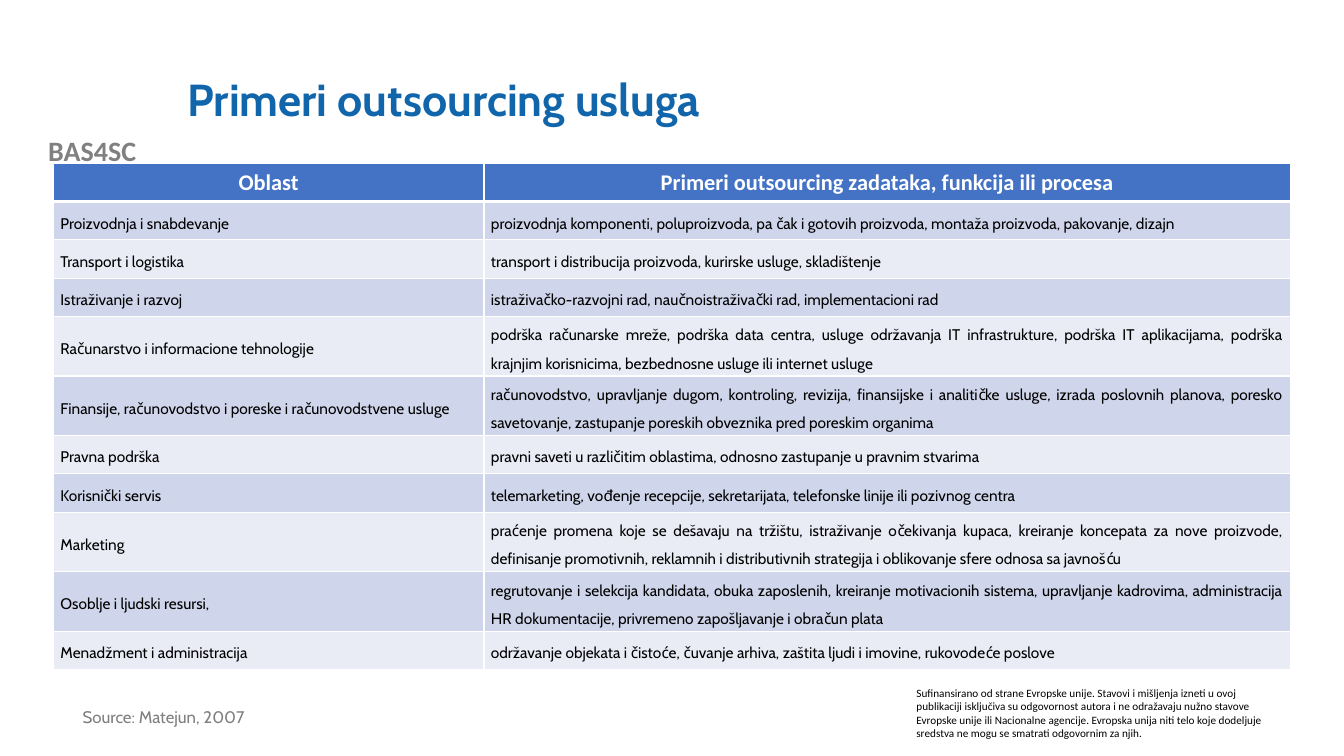
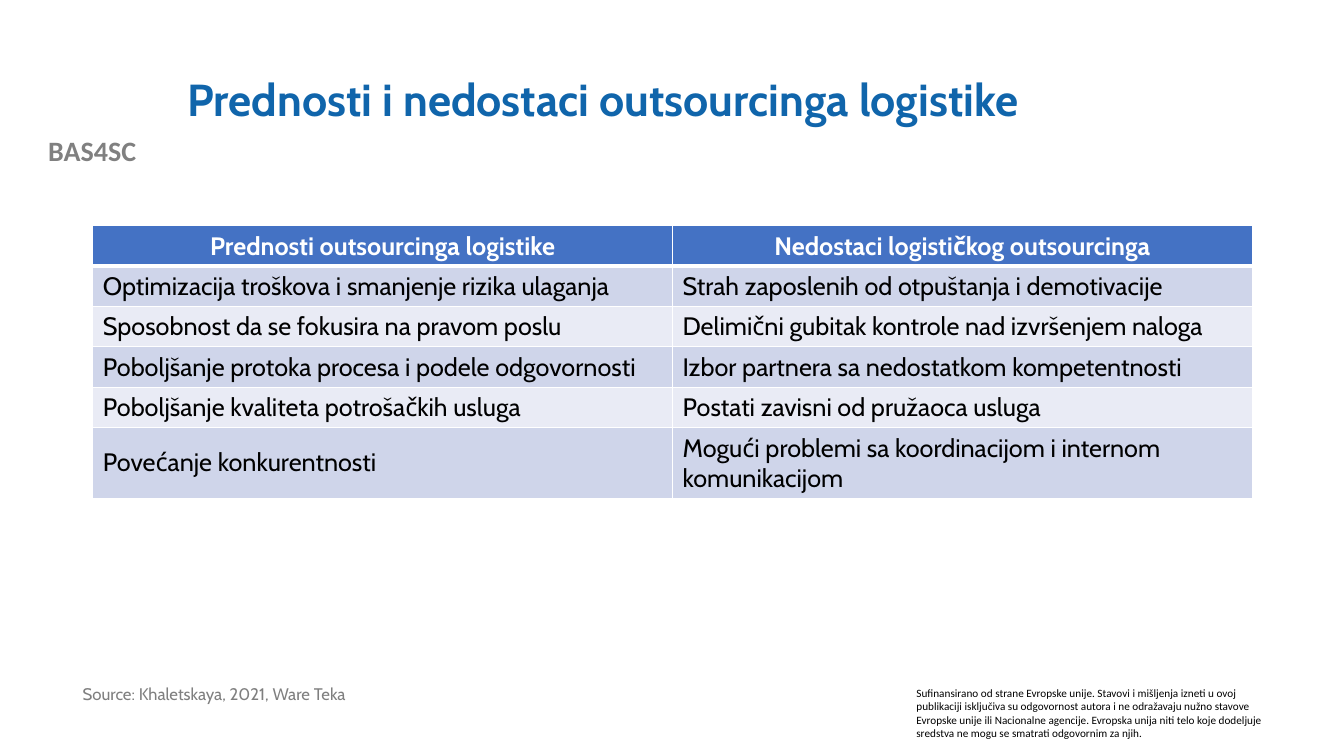
import dataclasses
import typing

import lxml.etree
import pptx
import pptx.dml.color
import pptx.enum.text
import pptx.oxml.ns
import pptx.util

EMU_PER_PX = 9144
ALIGN = pptx.enum.text.PP_ALIGN
ANCHOR = pptx.enum.text.MSO_ANCHOR

COLORS = {
    "title": "1065AB",
    "label": "808080",
    "source": "7F7F7F",
    "text": "000000",
    "white": "FFFFFF",
    "header": "4472C4",
    "band_dark": "CFD5EA",
    "band_light": "E9EBF5",
}
THIN_BORDER = 1
HEADER_BORDER = 3


@dataclasses.dataclass(frozen=True)
class TextStyle:
    font: str
    size: int
    color: str
    bold: bool = False
    align: typing.Any = ALIGN.LEFT
    line_spacing: float = 1.0
    space_after: int = 0


@dataclasses.dataclass(frozen=True)
class Area:
    left: int
    top: int
    width: int
    height: int


@dataclasses.dataclass(frozen=True)
class Margins:
    side: int
    top: int
    bottom: int


@dataclasses.dataclass(frozen=True)
class TableSpec:
    left: int
    top: int
    columns: tuple[int, ...]
    row_height: int
    rows: list[tuple[str, str]]
    header_style: TextStyle
    body_style: TextStyle
    body_margins: Margins


@dataclasses.dataclass(frozen=True)
class SlideSpec:
    title: str
    source: str
    source_top: int
    table: TableSpec


TITLE_STYLE = TextStyle("Cabin", 32, "title", bold=True, line_spacing=0.9)
LABEL_STYLE = TextStyle("Calibri", 20, "label", bold=True, align=ALIGN.CENTER)
NOTICE_STYLE = TextStyle("Calibri", 8, "text")
SOURCE_STYLE = TextStyle("Cabin", 12, "source", line_spacing=0.9)

NOTICE = (
    "Sufinansirano od strane Evropske unije. Stavovi i mišljenja izneti u ovoj "
    "publikaciji isključiva su odgovornost autora i ne odražavaju nužno stavove "
    "Evropske unije ili Nacionalne agencije. Evropska unija niti telo koje dodeljuje "
    "sredstva ne mogu se smatrati odgovornim za njih."
)

SERVICES = [
    ("Oblast", "Primeri outsourcing zadataka, funkcija ili procesa"),
    ("Proizvodnja i snabdevanje",
     "proizvodnja komponenti, poluproizvoda, pa čak i gotovih proizvoda, "
     "montaža proizvoda, pakovanje, dizajn"),
    ("Transport i logistika",
     "transport i distribucija proizvoda, kurirske usluge, skladištenje"),
    ("Istraživanje i razvoj",
     "istraživačko-razvojni rad, naučnoistraživački rad, implementacioni rad"),
    ("Računarstvo i informacione tehnologije",
     "podrška računarske mreže, podrška data centra, usluge održavanja IT "
     "infrastrukture, podrška IT aplikacijama, podrška krajnjim korisnicima, "
     "bezbednosne usluge ili internet usluge"),
    ("Finansije, računovodstvo i poreske i računovodstvene usluge",
     "računovodstvo, upravljanje dugom, kontroling, revizija, finansijske i "
     "analitičke usluge, izrada poslovnih planova, poresko savetovanje, "
     "zastupanje poreskih obveznika pred poreskim organima"),
    ("Pravna podrška",
     "pravni saveti u različitim oblastima, odnosno zastupanje u pravnim stvarima"),
    ("Korisnički servis",
     "telemarketing, vođenje recepcije, sekretarijata, telefonske linije ili "
     "pozivnog centra"),
    ("Marketing",
     "praćenje promena koje se dešavaju na tržištu, istraživanje očekivanja kupaca, "
     "kreiranje koncepata za nove proizvode, definisanje promotivnih, reklamnih i "
     "distributivnih strategija i oblikovanje sfere odnosa sa javnošću"),
    ("Osoblje i ljudski resursi,",
     "regrutovanje i selekcija kandidata, obuka zaposlenih, kreiranje motivacionih "
     "sistema, upravljanje kadrovima, administracija HR dokumentacije, privremeno "
     "zapošljavanje i obračun plata"),
    ("Menadžment i administracija",
     "održavanje objekata i čistoće, čuvanje arhiva, zaštita ljudi i imovine, "
     "rukovodeće poslove"),
]

PROS_AND_CONS = [
    ("Prednosti outsourcinga logistike", "Nedostaci logističkog outsourcinga"),
    ("Optimizacija troškova i smanjenje rizika ulaganja",
     "Strah zaposlenih od otpuštanja i demotivacije"),
    ("Sposobnost da se fokusira na pravom poslu",
     "Delimični gubitak kontrole nad izvršenjem naloga"),
    ("Poboljšanje protoka procesa i podele odgovornosti",
     "Izbor partnera sa nedostatkom kompetentnosti"),
    ("Poboljšanje kvaliteta potrošačkih usluga",
     "Postati zavisni od pružaoca usluga"),
    ("Povećanje konkurentnosti",
     "Mogući problemi sa koordinacijom i internom komunikacijom"),
]

SLIDES = [
    SlideSpec(
        "Primeri outsourcing usluga", "Source: Matejun, 2007", 698,
        TableSpec(
            53, 162, (427, 800), 38, SERVICES,
            TextStyle("Calibri", 16, "white", bold=True, align=ALIGN.CENTER),
            TextStyle("Cabin", 11, "text", align=ALIGN.JUSTIFY,
                      line_spacing=1.5, space_after=6),
            Margins(side=7, top=0, bottom=4),
        ),
    ),
    SlideSpec(
        "Prednosti i nedostaci outsourcinga logistike",
        "Source: Khaletskaya, 2021, Ware Teka", 676,
        TableSpec(
            92, 224, (575, 575), 40, PROS_AND_CONS,
            TextStyle("Cabin", 18, "white", bold=True, align=ALIGN.CENTER),
            TextStyle("Cabin", 18, "text"),
            Margins(side=10, top=5, bottom=5),
        ),
    ),
]


def px(length: int) -> pptx.util.Emu:
    return pptx.util.Emu(length * EMU_PER_PX)


def rgb(name: str) -> pptx.dml.color.RGBColor:
    return pptx.dml.color.RGBColor.from_string(COLORS[name])


def write_text(text_frame: typing.Any, text: str, style: TextStyle) -> None:
    text_frame.text = text
    para = text_frame.paragraphs[0]
    para.alignment = style.align
    para.line_spacing = style.line_spacing
    para.space_after = pptx.util.Pt(style.space_after)
    for span in para.runs:
        span.font.name = style.font
        span.font.size = pptx.util.Pt(style.size)
        span.font.bold = style.bold
        span.font.color.rgb = rgb(style.color)


def add_text(page: typing.Any, area: Area, text: str, style: TextStyle,
             anchor: typing.Any = ANCHOR.TOP) -> None:
    box = page.shapes.add_textbox(
        px(area.left), px(area.top), px(area.width), px(area.height))
    box.text_frame.word_wrap = True
    box.text_frame.vertical_anchor = anchor
    write_text(box.text_frame, text, style)


def set_borders(cell: typing.Any, top: int, bottom: int) -> None:
    properties = cell._tc.get_or_add_tcPr()
    widths = {"lnL": THIN_BORDER, "lnR": THIN_BORDER, "lnT": top, "lnB": bottom}
    qn = pptx.oxml.ns.qn
    for position, (tag, width) in enumerate(widths.items()):
        line = lxml.etree.Element(qn(f"a:{tag}"), w=str(pptx.util.Pt(width)))
        fill = lxml.etree.SubElement(line, qn("a:solidFill"))
        lxml.etree.SubElement(fill, qn("a:srgbClr"), val=COLORS["white"])
        properties.insert(position, line)


def add_table(page: typing.Any, spec: TableSpec) -> None:
    row_count = len(spec.rows)
    table = page.shapes.add_table(
        row_count, len(spec.columns), px(spec.left), px(spec.top),
        px(sum(spec.columns)), px(spec.row_height * row_count)).table
    for column, width in zip(table.columns, spec.columns):
        column.width = px(width)
    for row_index, texts in enumerate(spec.rows):
        table.rows[row_index].height = px(spec.row_height)
        is_header = row_index == 0
        band = "band_dark" if row_index % 2 else "band_light"
        for column_index, text in enumerate(texts):
            cell = table.cell(row_index, column_index)
            cell.vertical_anchor = ANCHOR.MIDDLE
            cell.fill.solid()
            cell.fill.fore_color.rgb = rgb("header" if is_header else band)
            if not is_header:
                margins = spec.body_margins
                cell.margin_left = cell.margin_right = px(margins.side)
                cell.margin_top = px(margins.top)
                cell.margin_bottom = px(margins.bottom)
            set_borders(
                cell,
                top=HEADER_BORDER if row_index == 1 else THIN_BORDER,
                bottom=HEADER_BORDER if is_header else THIN_BORDER)
            write_text(cell.text_frame, text,
                       spec.header_style if is_header else spec.body_style)


def add_page(deck: typing.Any, spec: SlideSpec) -> None:
    page = deck.slides.add_slide(deck.slide_layouts[6])
    add_text(page, Area(0, 128, 183, 44), "BAS4SC", LABEL_STYLE)
    add_text(page, Area(899, 676, 368, 64), NOTICE, NOTICE_STYLE)
    add_text(page, Area(176, 40, 1066, 122), spec.title, TITLE_STYLE, ANCHOR.MIDDLE)
    add_text(page, Area(72, spec.source_top, 501, 52), spec.source, SOURCE_STYLE)
    add_table(page, spec.table)


def main() -> None:
    deck = pptx.Presentation()
    deck.slide_width = px(1333)
    deck.slide_height = px(750)
    for spec in SLIDES:
        add_page(deck, spec)
    deck.save("out.pptx")


if __name__ == "__main__":
    main()
